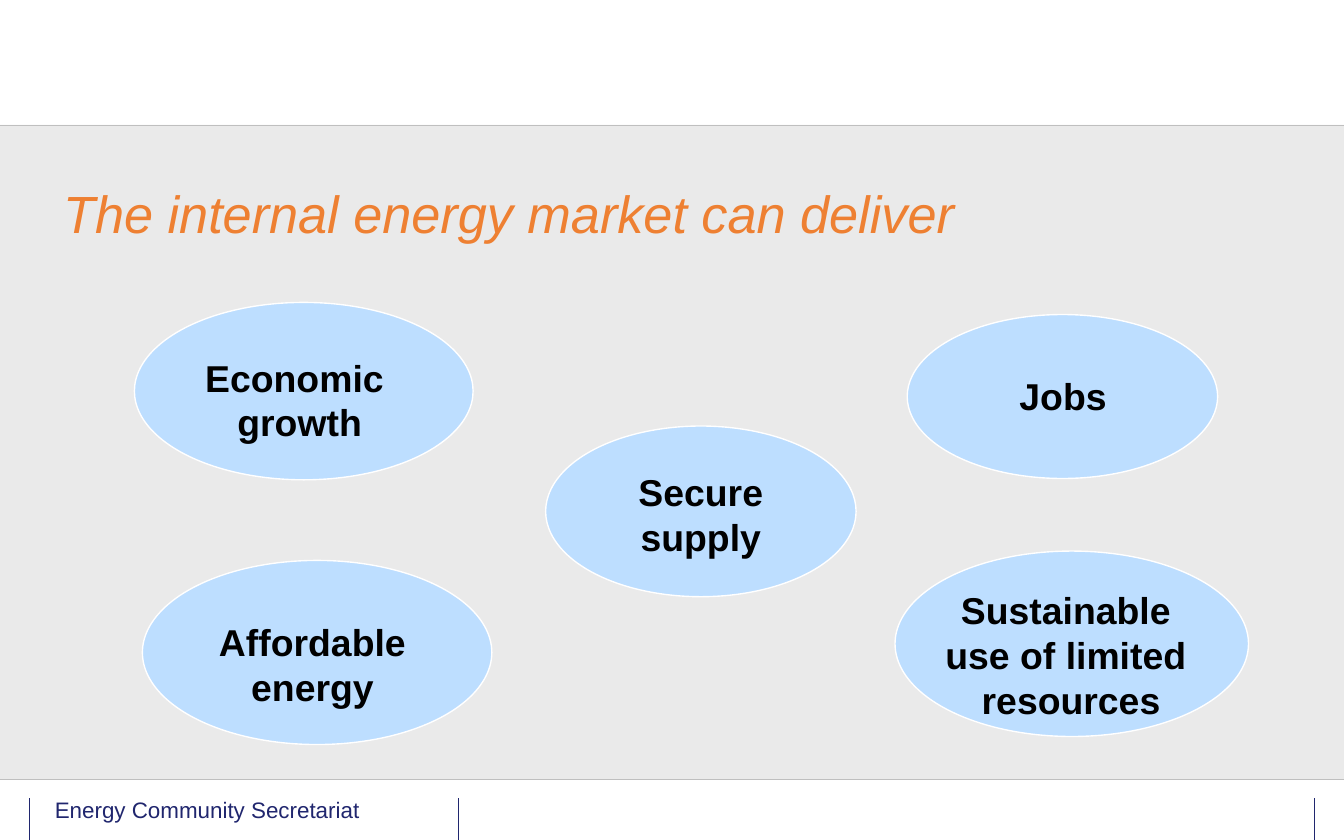
import pptx
import pptx.util
import pptx.dml.color
import pptx.enum.shapes
import pptx.enum.text
import pptx.oxml.ns
import lxml.etree

Inches = pptx.util.Inches
RGB = pptx.dml.color.RGBColor
Shape = pptx.enum.shapes.MSO_SHAPE
Align = pptx.enum.text.PP_ALIGN
Anchor = pptx.enum.text.MSO_ANCHOR

WHITE = RGB(0xFF, 0xFF, 0xFF)
BLACK = RGB(0, 0, 0)
PALE = RGB(0xEA, 0xEA, 0xEA)
GREY = RGB(0xBF, 0xBF, 0xBF)
NAVY = RGB(0x20, 0x26, 0x6E)
SKY = RGB(0xBD, 0xDE, 0xFF)
ORANGE = RGB(0xEE, 0x80, 0x32)


def write(frame, text, size, color, align=Align.LEFT, bold=False,
          italic=False, anchor=Anchor.TOP, wrap=True):
    frame.word_wrap = wrap
    frame.vertical_anchor = anchor
    frame.text = text
    for para in frame.paragraphs:
        para.alignment = align
        font = para.font
        font.name = "Arial"
        font.size = pptx.util.Pt(size)
        font.bold = bold
        font.italic = italic
        font.color.rgb = color


class Deck:
    def __init__(self, wide, high):
        self.show = pptx.Presentation()
        self.show.slide_width = Inches(wide)
        self.show.slide_height = Inches(high)
        self.slide = self.show.slides.add_slide(self.show.slide_layouts[5])

    def shape(self, kind, box, fill, edge=None):
        item = self.slide.shapes.add_shape(kind, *map(Inches, box))
        item.shadow.inherit = False
        item.fill.solid()
        item.fill.fore_color.rgb = fill
        if edge is None:
            item.line.fill.background()
        else:
            item.line.color.rgb = edge
            item.line.width = pptx.util.Pt(0.75)

    def line(self, ends, color, width):
        item = self.slide.shapes.add_connector(
            pptx.enum.shapes.MSO_CONNECTOR.STRAIGHT, *map(Inches, ends))
        item.line.color.rgb = color
        item.line.width = pptx.util.Pt(width)
        lxml.etree.SubElement(item._element.spPr,
                              pptx.oxml.ns.qn("a:effectLst"))

    def text(self, box, words, **style):
        item = self.slide.shapes.add_textbox(*map(Inches, box))
        write(item.text_frame, words, **style)

    def title(self, box, words, **style):
        item = self.slide.shapes.title
        item.left, item.top, item.width, item.height = map(Inches, box)
        write(item.text_frame, words, **style)
        item._element.getparent().append(item._element)


def main():
    deck = Deck(10, 6.25)
    for top, high, fill in ((5.78, 0.47, WHITE), (0, 0.93, WHITE),
                            (0.93, 4.87, PALE)):
        deck.shape(Shape.RECTANGLE, (0, top, 10, high), fill)
    for left in (0.22, 3.41, 9.78):
        deck.line((left, 5.94, left, 6.25), NAVY, 0.75)
    for top in (0.93, 5.8):
        deck.line((0, top, 10, top), GREY, 0.25)
    deck.text((0.31, 5.86, 2.67, 0.33), "Energy Community Secretariat",
              size=12, color=NAVY, anchor=Anchor.MIDDLE)
    deck.title((0.37, 1.29, 9.5, 0.59),
               "The internal energy market can deliver",
               size=28, color=ORANGE, italic=True, anchor=Anchor.MIDDLE)

    goals = (
        ((1, 2.25, 2.52, 1.32), (1.42, 2.59, 1.62, 0.77),
         "Economic \ngrowth"),
        ((6.75, 2.34, 2.31, 1.22), (6.44, 2.73, 2.94, 0.44), "Jobs"),
        ((4.06, 3.17, 2.31, 1.27), (4.2, 3.44, 2.03, 0.77),
         "Secure\nsupply"),
        ((1.06, 4.17, 2.6, 1.37), (0.83, 4.56, 2.99, 0.77),
         "Affordable\nenergy"),
        ((6.66, 4.1, 2.63, 1.38), (6.47, 4.32, 3, 1.11),
         "Sustainable \vuse of limited \nresources"),
    )
    for oval, box, words in goals:
        deck.shape(Shape.OVAL, oval, SKY, WHITE)
        deck.text(box, words, size=20, color=BLACK, bold=True,
                  align=Align.CENTER, wrap=False)
    deck.show.save("out.pptx")


if __name__ == "__main__":
    main()
